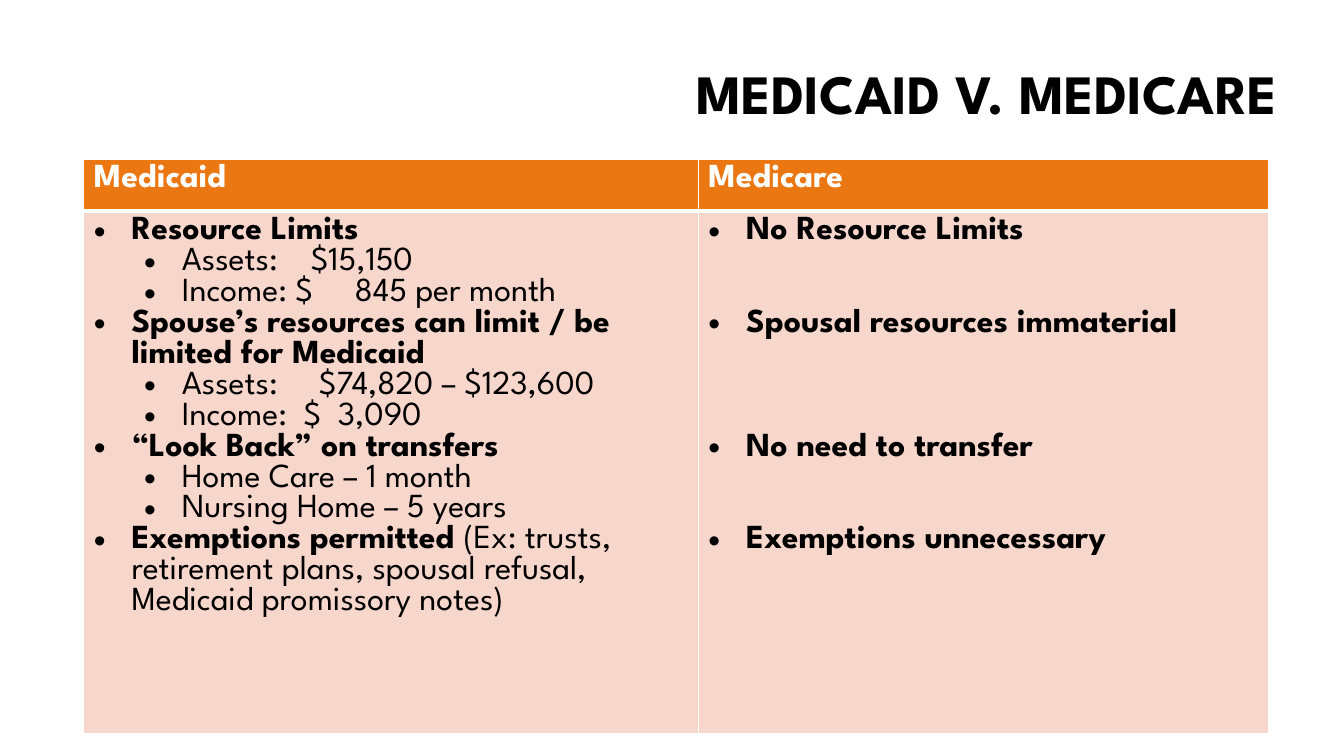
"""Build a slide with a table comparing Medicaid and Medicare."""
from lxml.etree import SubElement
from pptx import Presentation
from pptx.dml.color import RGBColor
from pptx.enum.text import MSO_ANCHOR as Anchor, PP_ALIGN as Align
from pptx.oxml.ns import qn
from pptx.util import Cm, Pt

TITLE = "MEDICAID V. MEDICARE"
HEADINGS = ["Medicaid", "Medicare"]
# Each point: level, bold text, regular text, tab stops in cm, blank lines above
MEDICAID = [
    (0, "Resource Limits", "", [], 0),
    (1, "", "Assets:\t$15,150", [5.47], 0),
    (1, "", "Income: $\t845 per month", [6.57], 0),
    (0, "Spouse’s resources can limit / be limited for Medicaid", "", [], 0),
    (1, "", "Assets:\t$74,820 – $123,600", [5.67], 0),
    (1, "", "Income:\t$\t3,090", [5.29, 6.15], 0),
    (0, "“Look Back” on transfers", "", [], 0),
    (1, "", "Home Care – 1 month", [], 0),
    (1, "", "Nursing Home – 5 years", [], 0),
    (0, "Exemptions permitted ",
     "(Ex: trusts, retirement plans, spousal refusal, Medicaid promissory notes)", [], 0),
]
MEDICARE = [
    (0, "No Resource Limits", "", [], 0),
    (0, "Spousal resources immaterial", "", [], 2),
    (0, "No need to transfer", "", [], 3),
    (0, "Exemptions unnecessary", "", [], 2),
]
COLORS = {"text": "000000", "light": "FFFFFF", "header": "EB7712", "body": "F7D6CC"}
FONT = "League Spartan"
BODY_SIZE = 24
LINE_PITCH = 0.92 * BODY_SIZE
HANGING = Cm(0.95)
LEVEL_STEP = Cm(1.27)
COLUMN_WIDTHS = [Cm(15.49), Cm(14.38)]
ROW_HEIGHTS = [Cm(1.31), Cm(13.16)]


def add_text(paragraph, text, size=BODY_SIZE, color="text", bold=True):
    """Add a formatted run to a paragraph."""
    run = paragraph.add_run()
    run.text = text
    run.font.name = FONT
    run.font.size = Pt(size)
    run.font.bold = bold
    run.font.color.rgb = RGBColor.from_string(COLORS[color])


def set_bullet(paragraph, level, tab_stops):
    """Give a paragraph a hanging bullet and its tab stops."""
    paragraph.level = level
    props = paragraph._p.get_or_add_pPr()
    props.set("marL", str(HANGING + level * LEVEL_STEP))
    props.set("indent", str(-HANGING))
    SubElement(props, qn("a:buFont"), typeface="Arial")
    SubElement(props, qn("a:buChar"), char="•")
    if tab_stops:
        tabs = SubElement(props, qn("a:tabLst"))
        for stop in tab_stops:
            SubElement(tabs, qn("a:tab"), pos=str(Cm(stop)), algn="l")


def style_cell(cell, fill, bottom_width):
    """Border a cell in white, then fill it."""
    props = cell._tc.get_or_add_tcPr()
    for side, width in (("L", 1), ("R", 1), ("T", 1), ("B", bottom_width)):
        border = SubElement(props, qn(f"a:ln{side}"), w=str(Pt(width)))
        paint = SubElement(border, qn("a:solidFill"))
        SubElement(paint, qn("a:srgbClr"), val=COLORS["light"])
    cell.fill.solid()
    cell.fill.fore_color.rgb = RGBColor.from_string(COLORS[fill])


def add_title(slide):
    """Place the right-aligned title."""
    title = slide.shapes.title
    title.left, title.top, title.width, title.height = Cm(8.76), Cm(2), Cm(23.7), Cm(2)
    frame = title.text_frame
    frame.word_wrap = True
    frame.vertical_anchor = Anchor.MIDDLE
    frame.margin_bottom = Cm(1.28)
    heading = frame.paragraphs[0]
    heading.alignment = Align.RIGHT
    heading.line_spacing = 0.9
    add_text(heading, TITLE, size=39.6)


def add_comparison(slide):
    """Place the two-column table."""
    table = slide.shapes.add_table(2, 2, Cm(2.11), Cm(4.01),
                                   sum(COLUMN_WIDTHS), sum(ROW_HEIGHTS)).table
    for row, height in zip(table.rows, ROW_HEIGHTS):
        row.height = height
    for col, (heading, points) in enumerate(zip(HEADINGS, [MEDICAID, MEDICARE])):
        table.columns[col].width = COLUMN_WIDTHS[col]
        header, body = table.cell(0, col), table.cell(1, col)
        style_cell(header, "header", 3)
        style_cell(body, "body", 1)
        add_text(header.text_frame.paragraphs[0], heading, color="light")
        for i, (level, strong, plain, tab_stops, lines_above) in enumerate(points):
            frame = body.text_frame
            point = frame.add_paragraph() if i else frame.paragraphs[0]
            set_bullet(point, level, tab_stops)
            if lines_above:
                point.space_before = Pt(round(lines_above * LINE_PITCH, 1))
            for text, bold in ((strong, True), (plain, False)):
                if text:
                    add_text(point, text, bold=bold)


def main():
    """Build and save the slide."""
    deck = Presentation()
    deck.slide_width, deck.slide_height = Cm(33.87), Cm(19.05)
    slide = deck.slides.add_slide(deck.slide_layouts[5])
    add_title(slide)
    add_comparison(slide)
    deck.save("out.pptx")


if __name__ == "__main__":
    main()
